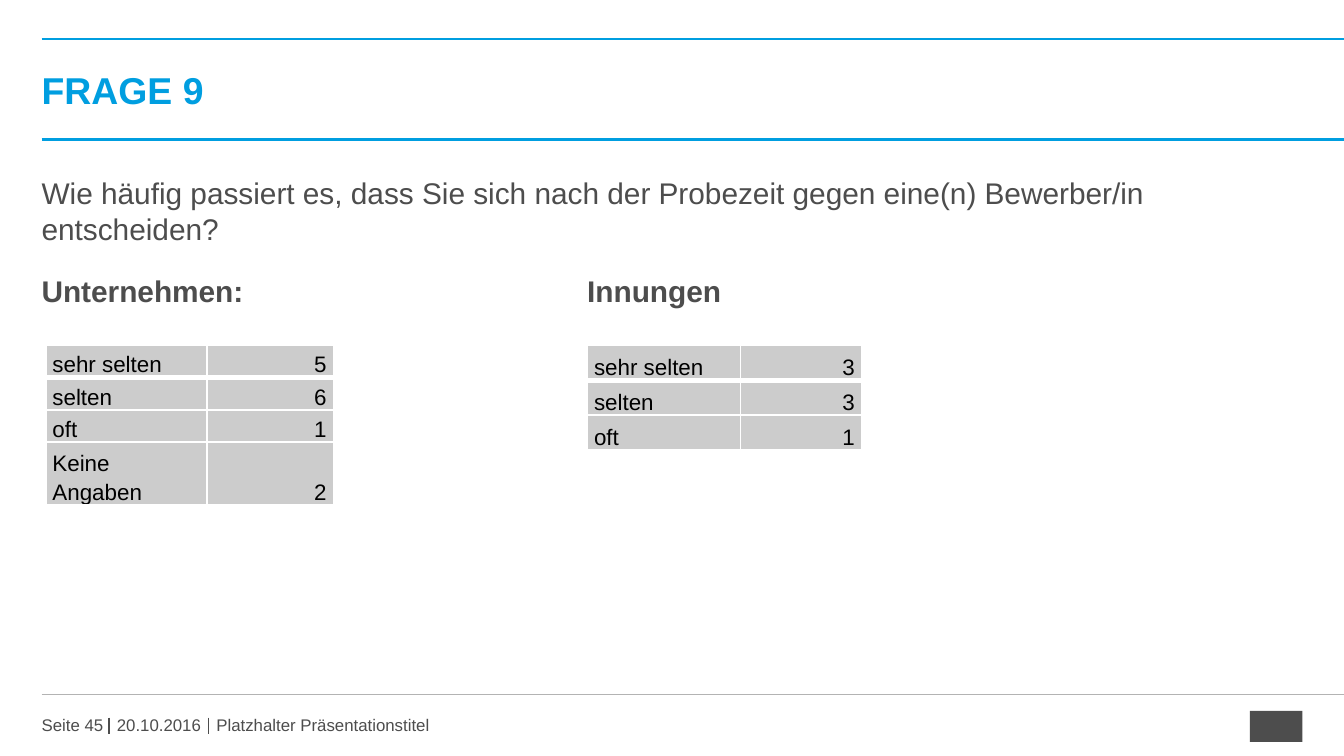
from dataclasses import dataclass

from lxml.etree import SubElement
from pptx import Presentation
from pptx.dml.color import RGBColor
from pptx.enum.shapes import MSO_CONNECTOR, MSO_SHAPE
from pptx.enum.text import MSO_ANCHOR, PP_ALIGN
from pptx.oxml.ns import qn
from pptx.util import Inches, Pt


@dataclass(frozen=True)
class Theme:
    font: str = "Arial"
    accent: str = "009EE0"
    text: str = "4D4D4D"
    rule: str = "B3B3B3"
    cell: str = "CCCCCC"
    cell_text: str = "000000"
    border: str = "FFFFFF"
    title_size: int = 20
    body_size: int = 16
    table_size: int = 12
    footer_size: int = 9


THEME = Theme()
PAGE_WIDTH = 10
PAGE_HEIGHT = PAGE_WIDTH * 9 / 16
MARGIN = 0.31
CONTENT_WIDTH = 9.37
RIGHT_COLUMN = 4.37


def style_para(para, size, color, bold=False):
    for span in para.runs:
        span.font.name = THEME.font
        span.font.size = Pt(size)
        span.font.bold = bold
        span.font.color.rgb = RGBColor.from_string(color)


def add_line(page, start, end, color, width):
    ends = [Inches(value) for value in (*start, *end)]
    line = page.shapes.add_connector(MSO_CONNECTOR.STRAIGHT, *ends)
    line.line.color.rgb = RGBColor.from_string(color)
    line.line.width = Pt(width)
    SubElement(line._element.spPr, qn("a:effectLst"))


def add_text(page, box, text, size, color, bold=False, anchor=MSO_ANCHOR.MIDDLE, wrap=True):
    frame = page.shapes.add_textbox(*map(Inches, box)).text_frame
    frame.margin_left = frame.margin_top = frame.margin_right = frame.margin_bottom = 0
    frame.vertical_anchor = anchor
    frame.word_wrap = wrap
    frame.text = text
    for para in frame.paragraphs:
        style_para(para, size, color, bold)
    return frame


def add_header(page, left, top, height, title):
    """Title between two rules that run to the right edge of the page."""
    for y in (top, top + height):
        add_line(page, (left, y), (PAGE_WIDTH, y), THEME.accent, 1.5)
    add_text(page, (left, top + 0.21, CONTENT_WIDTH, 0.34), title,
             THEME.title_size, THEME.accent, bold=True)


def add_question(page, box, question, headings):
    """Question with the two column headings below it, set apart by a tab stop."""
    frame = add_text(page, box, question + "\n" + "\t".join(headings),
                     THEME.body_size, THEME.text, anchor=MSO_ANCHOR.TOP)
    for para in frame.paragraphs:
        para.space_before = Pt(14)
    heading = frame.paragraphs[1]
    style_para(heading, THEME.body_size, THEME.text, bold=True)
    tabs = SubElement(heading._p.get_or_add_pPr(), qn("a:tabLst"))
    SubElement(tabs, qn("a:tab"), pos=str(Inches(RIGHT_COLUMN - box[0])), algn="l")


def set_borders(cell, bottom_width):
    properties = cell._tc.get_or_add_tcPr()
    widths = {"lnL": 1, "lnR": 1, "lnT": 1, "lnB": bottom_width}
    for index, (side, width) in enumerate(widths.items()):
        border = SubElement(properties, qn(f"a:{side}"), w=str(Pt(width)))
        fill = SubElement(border, qn("a:solidFill"))
        SubElement(fill, qn("a:srgbClr"), val=THEME.border)
        properties.insert(index, border)


def add_answers(page, left, top, widths, heights, answers):
    """Table of answers and counts; the first row has a thick lower border."""
    size = Inches(sum(widths)), Inches(sum(heights))
    table = page.shapes.add_table(len(answers), 2, Inches(left), Inches(top), *size).table
    table.first_row = table.horz_banding = False
    for column, width in zip(table.columns, widths):
        column.width = Inches(width)
    for number, (row, height, answer) in enumerate(zip(table.rows, heights, answers)):
        row.height = Inches(height)
        for cell, value, align in zip(row.cells, answer, (PP_ALIGN.LEFT, PP_ALIGN.RIGHT)):
            cell.text = str(value)
            cell.margin_left = cell.margin_right = Inches(0.05)
            cell.margin_top = cell.margin_bottom = 0
            cell.vertical_anchor = MSO_ANCHOR.BOTTOM
            cell.fill.solid()
            cell.fill.fore_color.rgb = RGBColor.from_string(THEME.cell)
            set_borders(cell, 3 if number == 0 else 1)
            para = cell.text_frame.paragraphs[0]
            para.alignment = align
            para.line_spacing = 1.15
            style_para(para, THEME.table_size, THEME.cell_text)


def add_footer(page, left, top, entries):
    """Rule, entries parted by short upright lines, and a plain logo block."""
    add_line(page, (left, top), (PAGE_WIDTH, top), THEME.rule, 0.5)
    for x, width, text in entries:
        add_text(page, (left + x, top + 0.15, width, 0.15), text,
                 THEME.footer_size, THEME.text, wrap=False)
    for x, _, _ in entries[1:]:
        divider = left + x - 0.06
        add_line(page, (divider, top + 0.17), (divider, top + 0.29), THEME.text, 0.75)
    logo = page.shapes.add_shape(MSO_SHAPE.RECTANGLE, Inches(9.3), Inches(top + 0.12),
                                 Inches(0.39), Inches(0.23))
    logo.shadow.inherit = False
    logo.fill.solid()
    logo.fill.fore_color.rgb = RGBColor.from_string(THEME.text)
    logo.line.fill.background()


def main():
    deck = Presentation()
    deck.slide_width, deck.slide_height = Inches(PAGE_WIDTH), Inches(PAGE_HEIGHT)
    page = deck.slides.add_slide(deck.slide_layouts[6])

    add_header(page, MARGIN, 0.29, 0.75, "FRAGE 9")
    add_question(
        page, (MARGIN, 1.3, CONTENT_WIDTH, 2.87),
        "Wie häufig passiert es, dass Sie sich nach der Probezeit gegen "
        "eine(n) Bewerber/in entscheiden?",
        ("Unternehmen:", "Innungen"))
    add_answers(page, 0.34, 2.57, (1.2, 0.94), (0.24, 0.24, 0.24, 0.47),
                [("sehr selten", 5), ("selten", 6), ("oft", 1), ("Keine Angaben", 2)])
    add_answers(page, RIGHT_COLUMN, 2.57, (1.14, 0.9), (0.26,) * 3,
                [("sehr selten", 3), ("selten", 3), ("oft", 1)])
    add_footer(page, MARGIN, 5.17, [
        (0, 0.58, "Seite 45"),
        (0.56, 0.63, "20.10.2016"),
        (1.3, 7.09, "Platzhalter Präsentationstitel"),
    ])
    deck.save("out.pptx")


if __name__ == "__main__":
    main()
